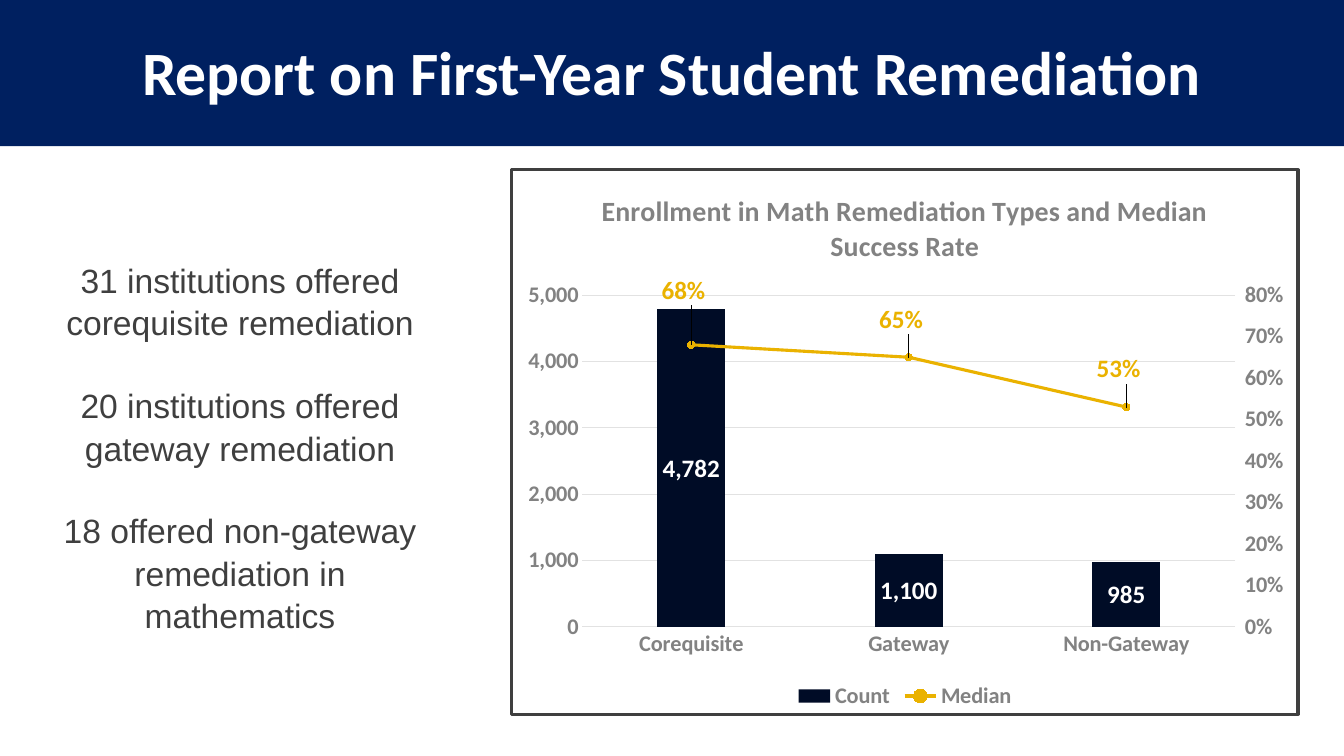
"""Build a slide on first-year student remediation with a combined column and line chart."""
from pptx import Presentation
from pptx.chart.axis import ValueAxis
from pptx.chart.data import CategoryChartData
from pptx.dml.color import RGBColor
from pptx.enum.chart import XL_CHART_TYPE, XL_LABEL_POSITION, XL_LEGEND_POSITION, XL_MARKER_STYLE, XL_TICK_MARK
from pptx.enum.shapes import MSO_SHAPE
from pptx.enum.text import MSO_ANCHOR, PP_ALIGN
from pptx.oxml import parse_xml
from pptx.oxml.ns import nsdecls, qn
from pptx.util import Inches, Pt

NAVY = RGBColor(0x00, 0x20, 0x60)
DARK_NAVY = RGBColor(0x00, 0x0C, 0x26)
GOLD = RGBColor(0xEA, 0xB2, 0x00)
GRAY = RGBColor(0x82, 0x82, 0x82)
LIGHT_GRAY = RGBColor(0xE2, 0xE2, 0xE2)
CHARCOAL = RGBColor(0x3F, 0x3F, 0x3F)
WHITE = RGBColor(0xFF, 0xFF, 0xFF)
CENTER = PP_ALIGN.CENTER
LABEL_CENTER = XL_LABEL_POSITION.CENTER
NO_TICK = XL_TICK_MARK.NONE
NAMESPACES = nsdecls("c", "a")


def set_font(font, size, color, bold=True, name="Calibri"):
    for attribute, value in {"size": Pt(size), "bold": bold, "name": name}.items():
        setattr(font, attribute, value)
    font.color.rgb = color


def manual_layout(**values):
    entries = "".join(f'<c:{key} val="{value}"/>' for key, value in values.items())
    return parse_xml(f"<c:layout {NAMESPACES}><c:manualLayout>{entries}</c:manualLayout></c:layout>")


presentation = Presentation()
presentation.slide_width, presentation.slide_height = Inches(13.33), Inches(7.5)
slide = presentation.slides.add_slide(presentation.slide_layouts[6])

banner = slide.shapes.add_shape(MSO_SHAPE.RECTANGLE, 0, 0, Inches(13.33), Inches(1.45))
banner.shadow.inherit = False
banner.fill.solid()
banner.fill.fore_color.rgb = NAVY
banner.line.fill.background()
banner.text_frame.word_wrap = True
banner.text_frame.vertical_anchor = MSO_ANCHOR.MIDDLE
banner.text_frame.margin_bottom = 0
heading = banner.text_frame.paragraphs[0]
heading.text = "Report on First-Year Student Remediation"
heading.alignment = CENTER
heading.line_spacing = 0.9
set_font(heading.font, 44, WHITE)

findings = [
    "31 institutions offered corequisite remediation",
    "20 institutions offered gateway remediation",
    "18 offered non-gateway remediation in mathematics",
]
findings_box = slide.shapes.add_textbox(Inches(0.44), Inches(2.51), Inches(3.88), Inches(3.74))
findings_box.text_frame.word_wrap = True
for index, finding in enumerate(findings):
    paragraph = findings_box.text_frame.paragraphs[0] if index == 0 else findings_box.text_frame.add_paragraph()
    paragraph.text = finding
    paragraph.alignment = CENTER
    paragraph.line_spacing = 1.05
    if index:
        paragraph.space_before = Pt(29)
    set_font(paragraph.font, 24, CHARCOAL, False, "Arial")

chart_data = CategoryChartData()
chart_data.categories = ["Corequisite", "Gateway", "Non-Gateway"]
chart_data.add_series("Count", [4782, 1100, 985], "#,##0")
chart_data.add_series("Median", [0.68, 0.65, 0.53], "0%")
chart = slide.shapes.add_chart(
    XL_CHART_TYPE.COLUMN_CLUSTERED, Inches(5.06), Inches(1.67), Inches(7.83), Inches(5.43), chart_data
).chart
set_font(chart.font, 10, CHARCOAL, False)

chart.has_title = True
chart.chart_title.include_in_layout = False
chart_heading = chart.chart_title.text_frame.paragraphs[0]
chart_heading.text = "Enrollment in Math Remediation Types and Median Success Rate"
set_font(chart_heading.runs[0].font, 20, GRAY)

chart.has_legend = True
chart.legend.position = XL_LEGEND_POSITION.BOTTOM
chart.legend.include_in_layout = False
set_font(chart.legend.font, 16, GRAY)

plot_area = chart.plots[0]._element.getparent()
for old_layout in plot_area.findall(qn("c:layout")):
    plot_area.remove(old_layout)
plot_area.insert(0, manual_layout(
    layoutTarget="inner", xMode="edge", yMode="edge", x=0.09, y=0.23, w=0.83, h=0.61))

columns = chart.plots[0]
columns.vary_by_categories = False
columns.gap_width = 219
columns.overlap = -27
median_element = columns.series[1]._element
for invert in median_element.findall(qn("c:invertIfNegative")):
    median_element.remove(invert)
line_plot = parse_xml(
    f'<c:lineChart {NAMESPACES}><c:grouping val="standard"/><c:varyColors val="0"/>'
    '<c:marker val="1"/><c:axId val="5001"/><c:axId val="5002"/></c:lineChart>')
line_plot.insert(2, median_element)
columns._element.addnext(line_plot)

rate_axis_element = parse_xml(
    f'<c:valAx {NAMESPACES}><c:axId val="5002"/><c:scaling><c:orientation val="minMax"/></c:scaling>'
    '<c:delete val="0"/><c:axPos val="r"/><c:numFmt formatCode="0%" sourceLinked="0"/>'
    '<c:majorTickMark val="out"/><c:minorTickMark val="none"/><c:tickLblPos val="nextTo"/>'
    '<c:crossAx val="5001"/><c:crosses val="max"/></c:valAx>')
hidden_axis_element = parse_xml(
    f'<c:catAx {NAMESPACES}><c:axId val="5001"/><c:scaling><c:orientation val="minMax"/></c:scaling>'
    '<c:delete val="1"/><c:axPos val="b"/><c:crossAx val="5002"/><c:crosses val="autoZero"/></c:catAx>')
count_axis = chart.value_axis
count_axis._element.addnext(rate_axis_element)
rate_axis_element.addnext(hidden_axis_element)
rate_axis = ValueAxis(rate_axis_element)

for axis, maximum, unit in ((count_axis, 5000, 1000), (rate_axis, 0.8, 0.1)):
    axis.minimum_scale, axis.maximum_scale, axis.major_unit = 0, maximum, unit
    axis.format.line.fill.background()
for axis in (chart.category_axis, count_axis, rate_axis):
    set_font(axis.tick_labels.font, 16, GRAY)
for axis in (chart.category_axis, count_axis):
    axis.major_tick_mark = NO_TICK
count_axis.tick_labels.number_format = "#,##0"
count_axis.tick_labels.number_format_is_linked = False
count_axis.has_major_gridlines = True
for line in (chart.category_axis.format.line, count_axis.major_gridlines.format.line):
    line.color.rgb = LIGHT_GRAY
    line.width = Pt(0.75)

count_series = chart.plots[0].series[0]
median_series = chart.plots[1].series[0]
count_series.format.fill.solid()
count_series.format.fill.fore_color.rgb = DARK_NAVY
median_series.smooth = False
median_series.format.line.color.rgb = GOLD
median_series.format.line.width = Pt(2.25)
median_series.marker.style = XL_MARKER_STYLE.CIRCLE
median_series.marker.size = 5
median_series.marker.format.fill.solid()
median_series.marker.format.fill.fore_color.rgb = GOLD
median_series.marker.format.line.color.rgb = GOLD

for series, color, number_format in ((count_series, WHITE, "#,##0"), (median_series, GOLD, "0%")):
    labels = series.data_labels
    labels.show_value = True
    labels.number_format = number_format
    labels.number_format_is_linked = False
    labels.position = LABEL_CENTER
    set_font(labels.font, 18, color)

for index, offset in enumerate((-0.1, -0.07, -0.07)):
    label = median_series.points[index].data_label
    label.position = LABEL_CENTER
    set_font(label.font, 18, GOLD)
    label_element = median_series.data_labels._element.findall(qn("c:dLbl"))[index]
    label_element.find(qn("c:idx")).addnext(manual_layout(x=-0.01, y=offset))

chart_frame = parse_xml(
    f'<c:spPr {NAMESPACES}><a:solidFill><a:srgbClr val="{WHITE}"/></a:solidFill>'
    f'<a:ln w="{Pt(2.25)}"><a:solidFill><a:srgbClr val="{CHARCOAL}"/></a:solidFill></a:ln></c:spPr>')
plot_area.getparent().addnext(chart_frame)

presentation.save("out.pptx")
